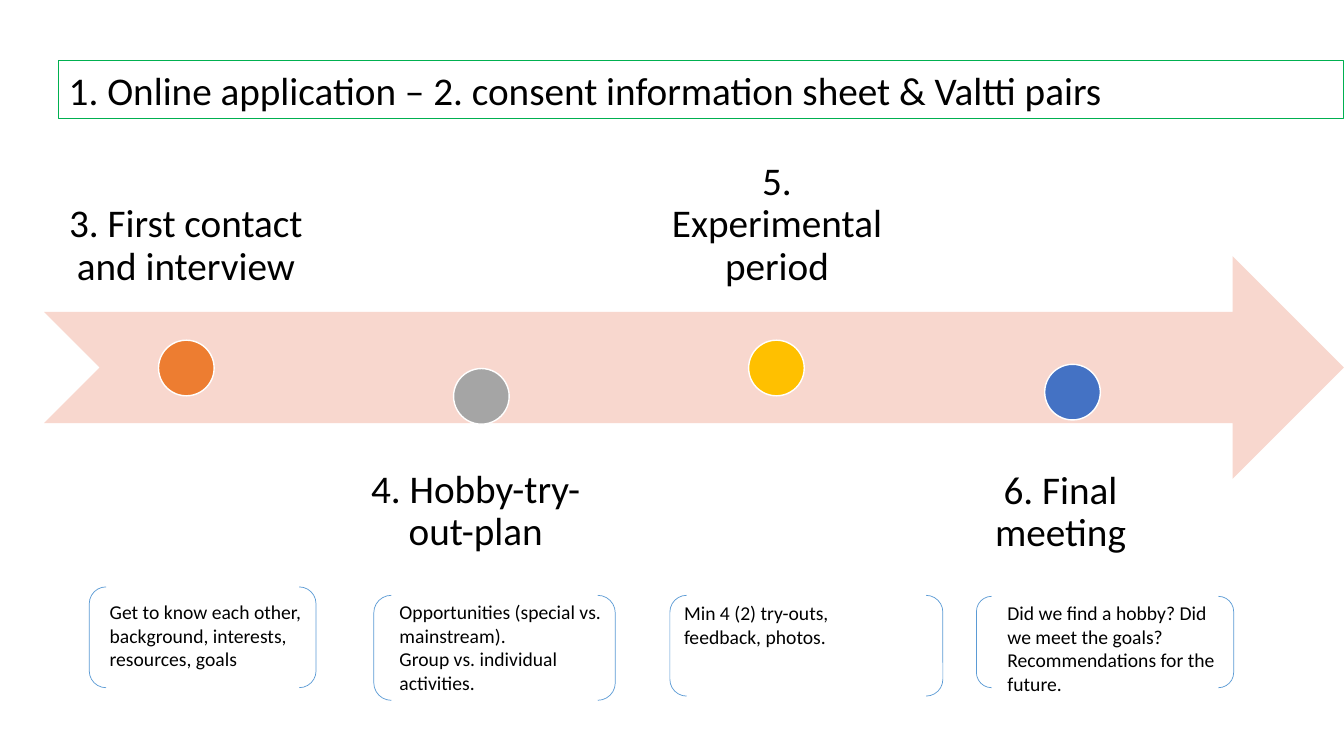
"""Build the slide with the steps of a hobby programme."""
from pptx import Presentation
from pptx import util as u
from pptx.dml import color
from pptx.enum import shapes, text

PX = 9525
HUES = {
    "black": "000000",
    "white": "FFFFFF",
    "pink": "F8D7CE",
    "green": "00B050",
    "blue": "5B9BD5",
    "first": "ED7D31",
    "plan": "A5A5A5",
    "trial": "FFC000",
    "final": "4472C4",
}
KINDS = shapes.MSO_SHAPE
TOP, BASE = text.MSO_ANCHOR.TOP, text.MSO_ANCHOR.BOTTOM
LEFT, MID = text.PP_ALIGN.LEFT, text.PP_ALIGN.CENTER
DOT = 53
STEPS = [
    ("first", "3. First contact and interview", (43, 84, 268, 212), BASE, (151, 324)),
    ("plan", "4. Hobby-try-out-plan", (319, 426, 268, 101), TOP, (432, 351)),
    ("trial", "5. Experimental period", (606, 84, 268, 212), BASE, (713, 324)),
    ("final", "6. Final meeting", (876, 427, 268, 118), TOP, (995, 347)),
]
NOTES = [
    ((85, 559, 216, 96), (95, 567, 205, 78),
     "Get to know each other, background, interests, resources, goals"),
    ((356, 567, 230, 100), (371, 567, 216, 100),
     "Opportunities (special vs. mainstream).\nGroup vs. individual activities."),
    ((638, 567, 260, 96), (642, 568, 233, 55),
     "Min 4 (2) try-outs, feedback, photos."),
    ((930, 568, 245, 87), (950, 568, 225, 100),
     "Did we find a hobby? Did we meet the goals? Recommendations for the future."),
]


def scale(box):
    """Turn px lengths into EMU."""
    return [n * PX for n in box]


def hue(name):
    """Return the named colour."""
    return color.RGBColor.from_string(HUES[name])


def draw(slide, kind, box, fill=None, line=None, width=1):
    """Add a preset shape with an optional fill and line."""
    shape = slide.shapes.add_shape(kind, *scale(box))
    shape.shadow.inherit = False
    if fill:
        shape.fill.solid()
        shape.fill.fore_color.rgb = hue(fill)
    else:
        shape.fill.background()
    if line:
        shape.line.color.rgb = hue(line)
        shape.line.width = u.Pt(width)
    else:
        shape.line.fill.background()
    return shape


def write(shape, words, size, align=LEFT, anchor=TOP):
    """Put wrapped black text into a shape."""
    frame = shape.text_frame
    frame.word_wrap = True
    frame.vertical_anchor = anchor
    frame.text = words
    for para in frame.paragraphs:
        para.alignment = align
        for run in para.runs:
            run.font.size = u.Pt(size)
            run.font.name = "Calibri"
            run.font.color.rgb = hue("black")
    return frame


def label(slide, words, box, anchor):
    """Add the centred name of a step."""
    shape = slide.shapes.add_textbox(*scale(box))
    frame = write(shape, words, 28, MID, anchor)
    frame.margin_left = frame.margin_right = 21 * PX
    frame.margin_top = frame.margin_bottom = 21 * PX
    frame.paragraphs[0].line_spacing = 0.9


def note(slide, frame, box, words):
    """Add a bracketed note."""
    draw(slide, KINDS.DOUBLE_BRACKET, frame, line="blue", width=0.5)
    write(slide.shapes.add_textbox(*scale(box)), words, 14)


def main():
    """Build and save the slide."""
    deck = Presentation()
    deck.slide_width, deck.slide_height = scale((1280, 720))
    slide = deck.slides.add_slide(deck.slide_layouts[6])
    draw(slide, KINDS.NOTCHED_RIGHT_ARROW, (42, 244, 1238, 212), "pink")
    for name, words, box, anchor, spot in STEPS:
        label(slide, words, box, anchor)
        draw(slide, KINDS.OVAL, (*spot, DOT, DOT), name, "white")
    head = draw(slide, KINDS.RECTANGLE, (56, 58, 1224, 55), line="green", width=0.75)
    write(head, "1. Online application – 2. consent information sheet & Valtti pairs", 28)
    for frame, box, words in NOTES:
        note(slide, frame, box, words)
    deck.save("out.pptx")


if __name__ == "__main__":
    main()
